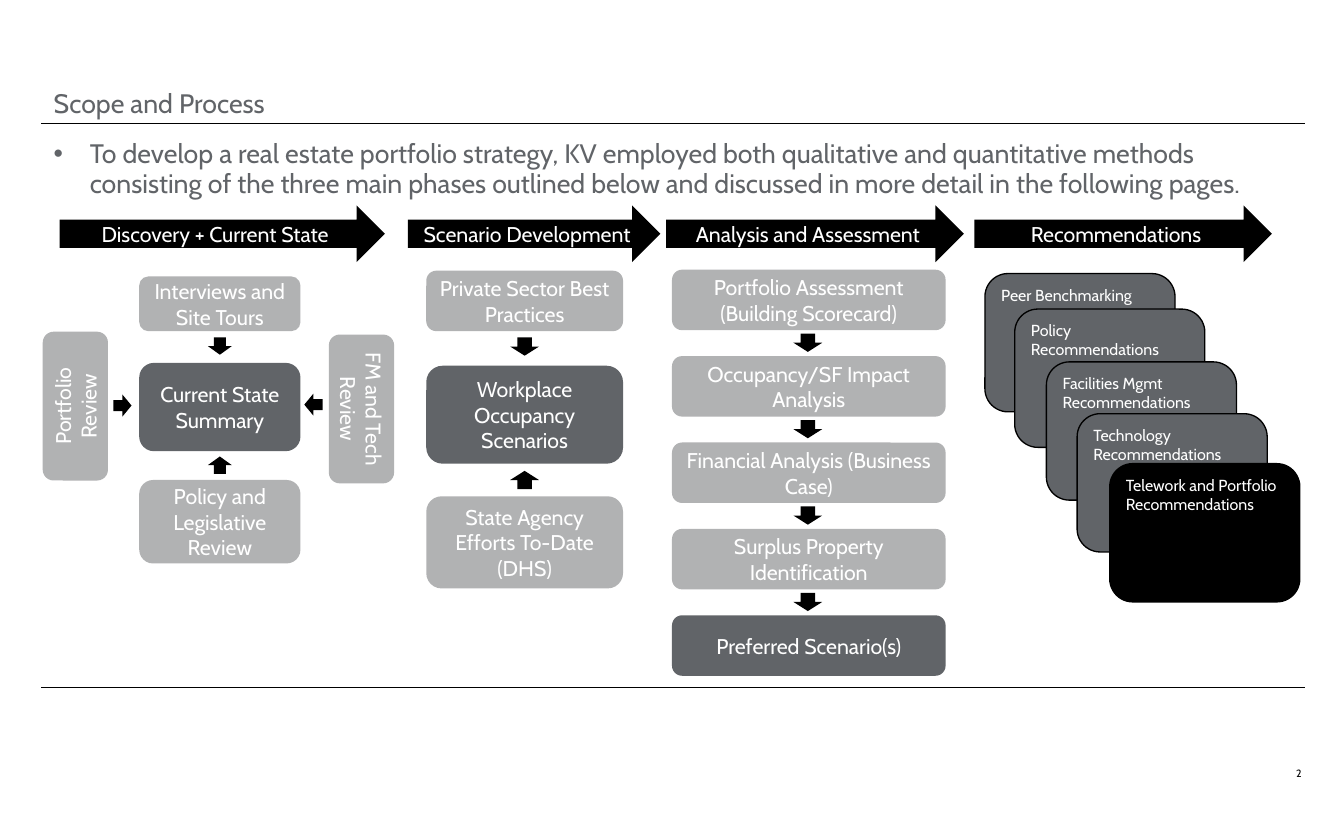
from pptx import Presentation
from pptx.dml.color import RGBColor as RGB
from pptx.enum.shapes import MSO_CONNECTOR as Conn, MSO_SHAPE as Form
from pptx.enum.text import MSO_ANCHOR as Anchor, MSO_AUTO_SIZE as Auto, PP_ALIGN as Align
from pptx.oxml.ns import qn
from pptx.util import Inches, Pt
from lxml import etree

DARK, LIGHT, BLACK, WHITE = "616468", "B1B2B3", "000000", "FFFFFF"


def write(item, text, size, tint, para, **frame):
    body = item.text_frame
    body.text = text
    for key, val in {"word_wrap": True, "auto_size": Auto.NONE, **frame}.items():
        setattr(body, key, val)
    line = body.paragraphs[0]
    for key, val in para.items():
        setattr(line, key, val)
    for key, val in {"size": Pt(size), "name": "Cabin"}.items():
        setattr(line.font, key, val)
    line.font.color.rgb = RGB.from_string(tint)


def draw(form, spot, fill, text="", turn=0, size=16, align=Align.CENTER,
         anchor=Anchor.MIDDLE):
    item = slide.shapes.add_shape(form, *map(Inches, spot))
    item.shadow.inherit = False
    item.rotation = turn
    item.fill.solid()
    item.fill.fore_color.rgb = RGB.from_string(fill)
    item.line.fill.background()
    if text:
        write(item, text, size, WHITE, {"alignment": align}, vertical_anchor=anchor)
    return item


deck = Presentation()
deck.slide_width, deck.slide_height = Inches(14), Inches(8.5)
slide = deck.slides.add_slide(deck.slide_layouts[1])

for y in (1.29, 7.16):
    rule = slide.shapes.add_connector(
        Conn.STRAIGHT, Inches(0.43), Inches(y), Inches(13.59), Inches(y))
    rule.line.width = Pt(0.5)
    rule.line.color.rgb = RGB.from_string(BLACK)
    etree.SubElement(rule._element.spPr, qn("a:effectLst"))

title, intro = slide.placeholders
heads = [
    (title, (0.46, 0.88, 4.11, 0.36), "Scope and Process"),
    (intro, (0.46, 1.4, 13.1, 5.64),
     "To develop a real estate portfolio strategy, KV employed both qualitative and "
     "quantitative methods consisting of the three main phases outlined below and "
     "discussed in more detail in the following pages."),
]
plain = {"alignment": Align.LEFT, "line_spacing": 0.95, "space_before": Pt(0)}
for item, spot, text in heads:
    for key, val in zip(("left", "top", "width", "height"), spot):
        setattr(item, key, Inches(val))
    item.text_frame.text = text
    props = item.text_frame.paragraphs[0]._p.get_or_add_pPr()
    props.set("marL", "0")
    props.set("indent", "0")
    etree.SubElement(props, qn("a:buNone"))
    write(item, text, 20, DARK, plain, vertical_anchor=Anchor.TOP)

page = slide.shapes.add_textbox(*map(Inches, (11.63, 7.99, 1.93, 0.21)))
write(page, "2", 7.9, BLACK, {"alignment": Align.RIGHT},
      margin_left=0, margin_right=0, margin_top=0, margin_bottom=0)

phases = [
    (0.62, 3.39, "Discovery + Current State"),
    (4.25, 2.63, "Scenario Development"),
    (6.94, 3.1, "Analysis and Assessment"),
    (10.15, 3.1, "Recommendations"),
]
for x, wide, text in phases:
    draw(Form.RIGHT_ARROW, (x, 2.14, wide, 0.59), BLACK, text)

boxes = [
    ((1.45, 2.88, 1.68, 0.57), LIGHT, "Interviews and Site Tours", 0),
    ((1.45, 3.78, 1.68, 0.92), DARK, "Current State Summary", 0),
    ((1.45, 5, 1.68, 0.87), LIGHT, "Policy and Legislative Review", 0),
    ((0.01, 3.89, 1.55, 0.68), LIGHT, "Portfolio Review", 270),
    ((2.99, 3.92, 1.55, 0.68), LIGHT, "FM and Tech Review", 90),
    ((4.44, 2.82, 2.05, 0.63), LIGHT, "Private Sector Best Practices", 0),
    ((4.44, 3.81, 2.05, 1.02), DARK, "Workplace Occupancy Scenarios", 0),
    ((4.44, 5.17, 2.05, 0.96), LIGHT, "State Agency Efforts To-Date (DHS)", 0),
]
for spot, fill, text, turn in boxes:
    draw(Form.ROUNDED_RECTANGLE, spot, fill, text, turn)

arrows = [
    ((1.18, 4.11, 0.19, 0.23), 0),
    ((3.17, 4.1, 0.19, 0.23), 180),
    ((2.2, 3.48, 0.18, 0.25), 90),
    ((2.2, 4.72, 0.18, 0.25), 270),
    ((5.37, 3.46, 0.19, 0.3), 90),
    ((5.37, 4.85, 0.19, 0.3), 270),
]
for spot, turn in arrows:
    draw(Form.RIGHT_ARROW, spot, BLACK, turn=turn)

steps = [
    "Portfolio Assessment (Building Scorecard)",
    "Occupancy/SF Impact Analysis",
    "Financial Analysis (Business Case)",
    "Surplus Property Identification",
    "Preferred Scenario(s)",
]
for i, text in enumerate(steps):
    y = 2.81 + 0.9 * i
    last = i == len(steps) - 1
    draw(Form.ROUNDED_RECTANGLE, (7, y, 2.85, 0.63), DARK if last else LIGHT, text)
    if not last:
        draw(Form.RIGHT_ARROW, (8.32, y + 0.61, 0.19, 0.3), BLACK, turn=90)

cards = [
    (10.26, 2.85, DARK, "Peer Benchmarking"),
    (10.57, 3.22, DARK, "Policy Recommendations"),
    (10.9, 3.77, DARK, "Facilities Mgmt Recommendations"),
    (11.22, 4.31, DARK, "Technology Recommendations"),
    (11.56, 4.83, BLACK, "Telework and Portfolio Recommendations"),
]
for x, y, fill, text in cards:
    card = draw(Form.ROUNDED_RECTANGLE, (x, y, 1.98, 1.44), fill, text,
                size=12, align=Align.LEFT, anchor=Anchor.TOP)
    card.line.width = Pt(1)
    card.line.color.rgb = RGB.from_string(BLACK)

deck.save("out.pptx")
